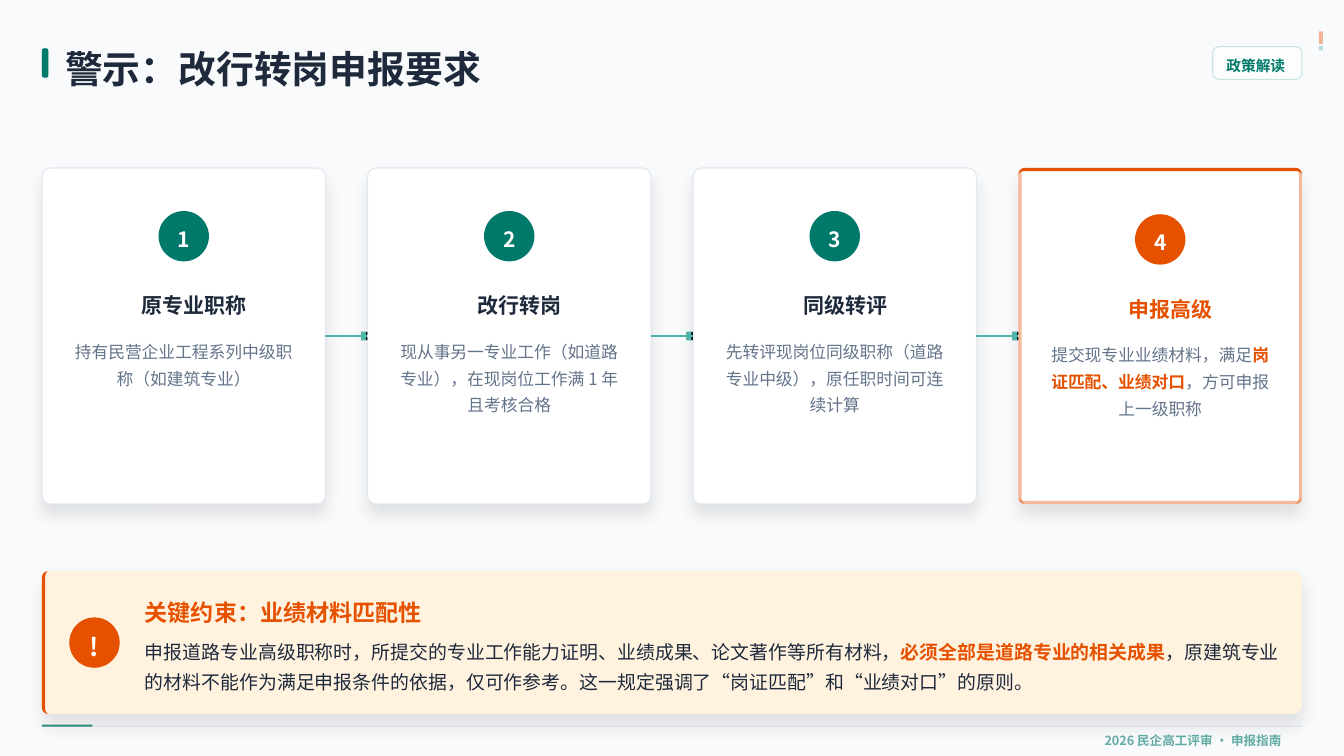
from dataclasses import dataclass
from math import cos, radians, sin
from typing import NamedTuple

from lxml.etree import SubElement
from pptx import Presentation
from pptx.dml.color import RGBColor
from pptx.enum.shapes import MSO_CONNECTOR, MSO_SHAPE
from pptx.enum.text import MSO_ANCHOR, MSO_AUTO_SIZE, PP_ALIGN
from pptx.oxml.ns import qn
from pptx.util import Emu, Pt

COLS, ROWS = 160, 90          # slide grid of square cells
CELL = 101600                 # one cell, 1/9 inch
FONT = "Noto Sans CJK SC"
GREEN, MINT, RUST = "00796B", "4DB6AC", "E65100"
INK, SLATE, WHITE, BLACK = "1E293B", "64748B", "FFFFFF", "000000"
DEEP, SOFT = (10, 15, 10), (5, 2, 1)   # shadow: opacity, blur, distance
EDGE, BEND = 0.38, 0.75       # side border width and corner radius


class Box(NamedTuple):
    x: float
    y: float
    w: float
    h: float


@dataclass
class Card:
    title: str
    text: str
    lines: int
    hot: bool = False


CARDS = [
    Card("原专业职称", "持有民营企业工程系列中级职称（如建筑专业）", 2),
    Card("改行转岗", "现从事另一专业工作（如道路专业），在现岗位工作满 1 年且考核合格", 3),
    Card("同级转评", "先转评现岗位同级职称（道路专业中级），原任职时间可连续计算", 3),
    Card("申报高级", "提交现专业业绩材料，满足|岗证匹配、业绩对口|，方可申报上一级职称", 3, True),
]


def size(n: float) -> Emu:
    return Emu(round(n * CELL))


def paint(fill, tint: str, alpha: int = 100) -> None:
    fill.solid()
    fill.fore_color.rgb = RGBColor.from_string(tint)
    if alpha < 100:
        clr = fill._xPr.find(qn("a:solidFill"))[0]
        SubElement(clr, qn("a:alpha"), val=str(alpha * 1000))


def shade(shape, cast: tuple) -> None:
    alpha, blur, dist = cast
    glow = SubElement(shape._element.spPr.find(qn("a:effectLst")), qn("a:outerShdw"),
                      blurRad=str(Pt(blur)), dist=str(Pt(dist)), dir="5400000",
                      algn="ctr", rotWithShape="0")
    clr = SubElement(glow, qn("a:srgbClr"), val=BLACK)
    SubElement(clr, qn("a:alpha"), val=str(alpha * 1000))


def block(box: Box, tint: str, alpha: int = 100, bend: float = 0,
          line: str = "", fade: int = 100, cast: tuple = ()):
    kind = MSO_SHAPE.ROUNDED_RECTANGLE if bend else MSO_SHAPE.RECTANGLE
    shape = shapes.add_shape(kind, *map(size, box))
    shape.shadow.inherit = False
    if bend:
        shape.adjustments[0] = bend / min(box.w, box.h)
    paint(shape.fill, tint, alpha)
    if line:
        paint(shape.line.fill, line, fade)
        shape.line.width = Pt(1)
    else:
        shape.line.fill.background()
    if cast:
        shade(shape, cast)
    return shape


def write(shape, text: str, pt: float, tint: str, bold: bool = False, alpha: int = 100,
          align=PP_ALIGN.LEFT, lead: float = 1.25, anchor=MSO_ANCHOR.TOP) -> None:
    """Fill a shape with one paragraph; parts between bars are stressed."""
    frame = shape.text_frame
    frame.word_wrap, frame.auto_size = True, MSO_AUTO_SIZE.NONE
    frame.vertical_anchor = anchor
    frame.margin_left = frame.margin_right = frame.margin_top = frame.margin_bottom = 0
    para = frame.paragraphs[0]
    para.alignment, para.line_spacing = align, lead
    for i, part in enumerate(text.split("|")):
        run = para.add_run()
        run.text = part
        font = run.font
        font.size, font.name = Pt(pt), FONT
        font.bold = bold or i % 2 == 1
        paint(font.fill, RUST if i % 2 else tint, alpha)
        SubElement(run._r.rPr, qn("a:ea"), typeface=FONT)


def label(box: Box, text: str, **form) -> None:
    write(shapes.add_textbox(*map(size, box)), text, **form)


def disc(x: float, y: float, text: str, tint: str, pt: float = 20) -> None:
    write(block(Box(x, y, 6, 6), tint, bend=3), text, pt=pt, tint=WHITE, bold=True,
          align=PP_ALIGN.CENTER, anchor=MSO_ANCHOR.MIDDLE)


def side(box: Box, k: int, tint: str, alpha: int = 100) -> None:
    """Border on one side (0 top, 1 right, 2 bottom, 3 left), tapering round its corners."""
    left, top = box.x + BEND, box.y + BEND
    right, base = box.x + box.w - BEND, box.y + box.h - BEND
    spots = [(left, top), (right, top), (right, base), (left, base)]

    def arc(rx: float, ry: float) -> list:
        return [(size(cx + rx * cos(radians(a))), size(cy + ry * sin(radians(a))))
                for n in (k, k + 1) for cx, cy in [spots[n % 4]]
                for a in range(180 + 90 * n, 271 + 90 * n, 15)]

    thin = BEND - EDGE
    inner = arc(thin, BEND) if k % 2 else arc(BEND, thin)
    pts = arc(BEND, BEND) + inner[::-1]
    form = shapes.build_freeform(*pts[0])
    form.add_line_segments(pts[1:], close=True)
    shape = form.convert_to_shape()
    shape.shadow.inherit = False
    paint(shape.fill, tint, alpha)
    shape.line.fill.background()


def step(i: int, card: Card):
    box = Box(5 + 38.75 * i, 20, 33.75, 40)
    drop = EDGE if card.hot else 0
    mid = box.x + box.w / 2
    shape = block(box, WHITE, bend=1, line="" if card.hot else "E2E8F0", cast=DEEP)
    disc(mid - 3, 25.12 + drop, str(i + 1), RUST if card.hot else GREEN)
    wide = 2.5 * len(card.title) + 2.5
    label(Box(mid + 1.25 - wide / 2, 34.12 + drop, wide, 3.75), card.title, pt=20,
          tint=RUST if card.hot else INK, bold=True, align=PP_ALIGN.CENTER)
    label(Box(box.x + 3.12, 39.88 + drop, 27.5, 3.2 * card.lines), card.text, pt=16,
          tint=SLATE, align=PP_ALIGN.CENTER, lead=1.33)
    if card.hot:
        for k in range(4):
            side(box, k, RUST, 40 if k else 100)
    return shape


def link(a, b) -> None:
    line = shapes.add_connector(MSO_CONNECTOR.STRAIGHT, 0, 0, 0, 0)
    line.begin_connect(a, 3)
    line.end_connect(b, 1)
    paint(line.line.fill, MINT)
    line.line.width = Pt(2)
    SubElement(line._element.spPr, qn("a:effectLst"))
    # Square tip with dark corners
    tip = b.left / CELL - 0.75
    for y in (39.5, 40.12):
        block(Box(tip, y, 0.75, 0.38), BLACK)
    block(Box(tip, 39.5, 0.56, 1), MINT)


deck = Presentation()
deck.slide_width, deck.slide_height = size(COLS), size(ROWS)
slide = deck.slides.add_slide(deck.slide_layouts[5])
shapes = slide.shapes
paint(slide.background.fill, "F8FAFC")

# Footer and corner mark
block(Box(5, 86.38, 150, 0.12), SLATE, 15)
block(Box(5, 86.25, 6, 0.25), GREEN, 80)
label(Box(131.5, 86.75, 26, 2.25), "2026 民企高工评审 · 申报指南",
      pt=12, tint=GREEN, bold=True, alpha=60)
block(Box(157, 3.75, 0.5, 1.5), RUST, 40)
block(Box(157, 5.5, 0.5, 0.5), MINT, 40)

# Four steps and their links
steps = [step(i, card) for i, card in enumerate(CARDS)]
for a, b in zip(steps, steps[1:]):
    link(a, b)

# Key rule
note = Box(5, 68, 150, 17)
block(note, "FFF3E0", bend=1, cast=DEEP)
side(note, 3, RUST)
disc(8.25, 73.5, "!", RUST, 24)
label(Box(17.25, 70.38, 139.4, 4.12), "关键约束：业绩材料匹配性", pt=22, tint=RUST, bold=True)
label(Box(17.25, 75.4, 135.25, 7.25),
      "申报道路专业高级职称时，所提交的专业工作能力证明、业绩成果、论文著作等所有材料，"
      "|必须全部是道路专业的相关成果|，原建筑专业的材料不能作为满足申报条件的依据，"
      "仅可作参考。这一规定强调了“岗证匹配”和“业绩对口”的原则。",
      pt=18, tint=INK, lead=1.33)

# Title and badge
block(Box(5, 5.75, 0.75, 3.5), GREEN, bend=0.25, cast=SOFT)
title = shapes.title
title.left, title.top, title.width, title.height = map(size, Box(7.75, 4.12, 141.5, 6.75))
write(title, "警示：改行转岗申报要求", pt=36, tint=INK, bold=True)
block(Box(144.38, 5.56, 10.62, 3.88), WHITE, 60, bend=0.75, line=MINT, fade=30)
label(Box(146, 6.2, 10, 2.62), "政策解读", pt=14, tint=GREEN, bold=True)

deck.save("out.pptx")
